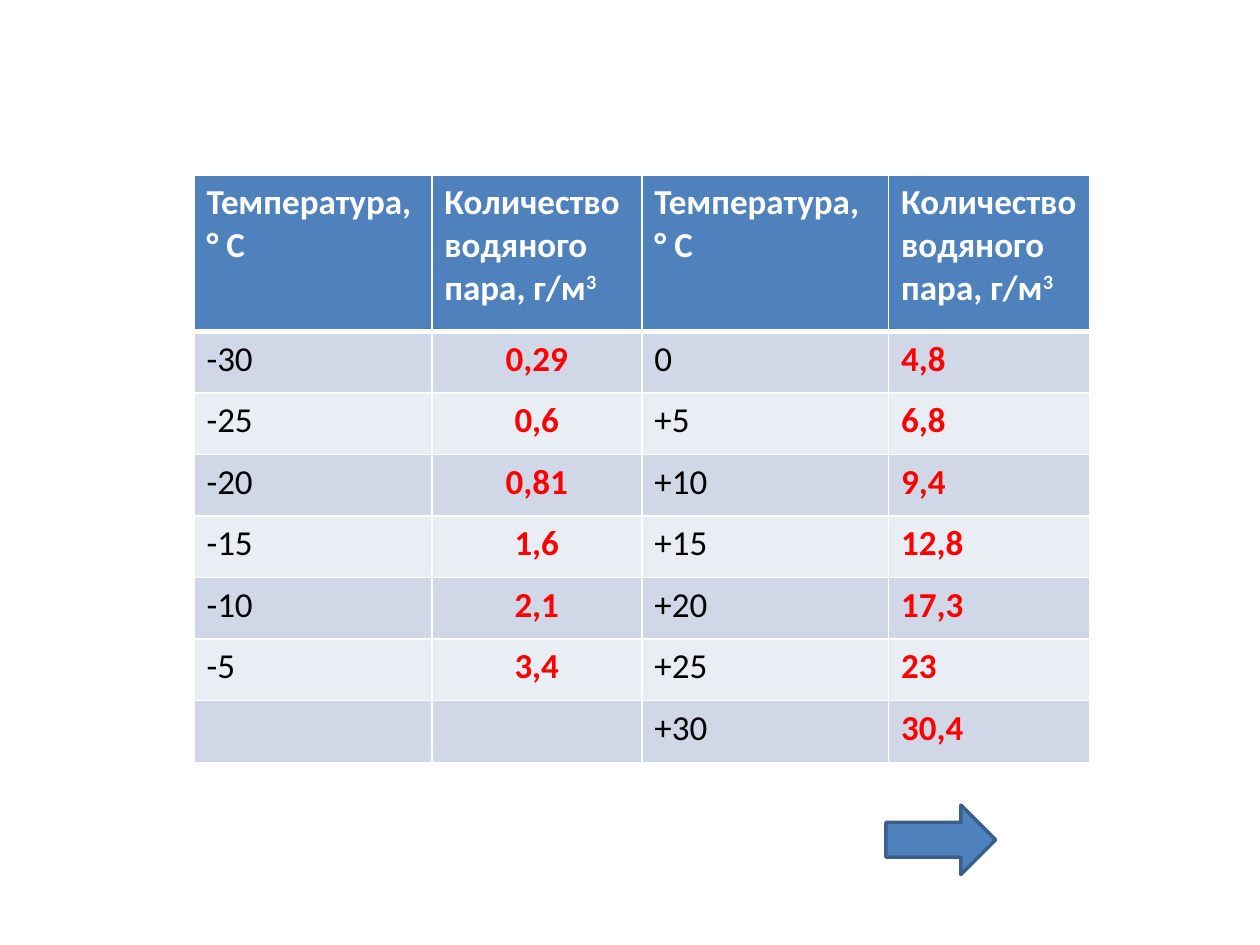
from lxml.etree import SubElement
from pptx import Presentation
from pptx.dml.color import RGBColor
from pptx.enum.shapes import MSO_SHAPE
from pptx.enum.text import PP_ALIGN
from pptx.oxml.ns import qn
from pptx.util import Cm, Pt

WHITE = RGBColor(0xFF, 0xFF, 0xFF)
BLACK = RGBColor(0x00, 0x00, 0x00)
RED = RGBColor(0xFF, 0x00, 0x00)
BLUE = RGBColor(0x4F, 0x81, 0xBD)
NAVY = RGBColor(0x3A, 0x5F, 0x8C)
BANDS = [RGBColor(0xE9, 0xED, 0xF4), RGBColor(0xD0, 0xD8, 0xE8)]

HEAD = [("Температура, ° С", ""), ("Количество водяного пара, г/м", "3")] * 2
ROWS = [
    ("-30", "0,29", "0", "4,8"),
    ("-25", "0,6", "+5", "6,8"),
    ("-20", "0,81", "+10", "9,4"),
    ("-15", "1,6", "+15", "12,8"),
    ("-10", "2,1", "+20", "17,3"),
    ("-5", "3,4", "+25", "23"),
    ("", "", "+30", "30,4"),
]
WIDTHS = [4.8, 4.24, 4.98, 4.06]
HEAD_H = 3.15


def add_run(para, text, color, bold, base=0):
    """Add one run, raised by base thousandths of a percent."""
    run = para.add_run()
    run.text = text
    font = run.font
    font.name, font.size, font.bold = "Calibri", Pt(20), bold
    font.color.rgb = color
    if base:
        font._element.set("baseline", str(base))


def style_cell(cell, fill, top, bottom):
    """Give a cell white borders and a solid fill."""
    props = cell._tc.get_or_add_tcPr()
    for side, width in (("L", 1), ("R", 1), ("T", top), ("B", bottom)):
        line = SubElement(props, qn(f"a:ln{side}"), w=str(Pt(width)))
        solid = SubElement(line, qn("a:solidFill"))
        SubElement(solid, qn("a:srgbClr"), val=str(WHITE))
    cell.fill.solid()
    cell.fill.fore_color.rgb = fill


def add_grid(slide, left, top, width, height):
    """Place the vapour table in the given box."""
    count = len(ROWS) + 1
    table = slide.shapes.add_table(
        count, len(HEAD), Cm(left), Cm(top), Cm(width), Cm(height)).table
    for col, share in zip(table.columns, WIDTHS):
        col.width = Cm(width * share / sum(WIDTHS))
    for r, row in enumerate(table.rows):
        row.height = Cm((height - HEAD_H) / len(ROWS) if r else HEAD_H)
    for c, (text, power) in enumerate(HEAD):
        cell = table.cell(0, c)
        style_cell(cell, BLUE, 1, 3)
        para = cell.text_frame.paragraphs[0]
        add_run(para, text, WHITE, True)
        if power:
            add_run(para, power, WHITE, True, 30000)
    for r, values in enumerate(ROWS, 1):
        for c, text in enumerate(values):
            cell = table.cell(r, c)
            style_cell(cell, BANDS[r % 2], 3 if r == 1 else 1, 1)
            para = cell.text_frame.paragraphs[0]
            if c == 1:
                para.alignment = PP_ALIGN.CENTER
            if text:
                amount = c % 2 == 1
                add_run(para, text, RED if amount else BLACK, amount)


def add_arrow(slide, left, top, width, height):
    """Place the next-page arrow in the given box."""
    arrow = slide.shapes.add_shape(
        MSO_SHAPE.RIGHT_ARROW, Cm(left), Cm(top), Cm(width), Cm(height))
    arrow.shadow.inherit = False
    arrow.fill.solid()
    arrow.fill.fore_color.rgb = BLUE
    arrow.line.color.rgb = NAVY
    arrow.line.width = Pt(2)


def main():
    """Build and save the slide."""
    deck = Presentation()
    deck.slide_width, deck.slide_height = Cm(25.4), Cm(19.05)
    slide = deck.slides.add_slide(deck.slide_layouts[6])
    add_grid(slide, 3.91, 3.53, 18.06, 11.84)
    add_arrow(slide, 17.86, 16.23, 2.21, 1.4)
    deck.save("out.pptx")


if __name__ == "__main__":
    main()
